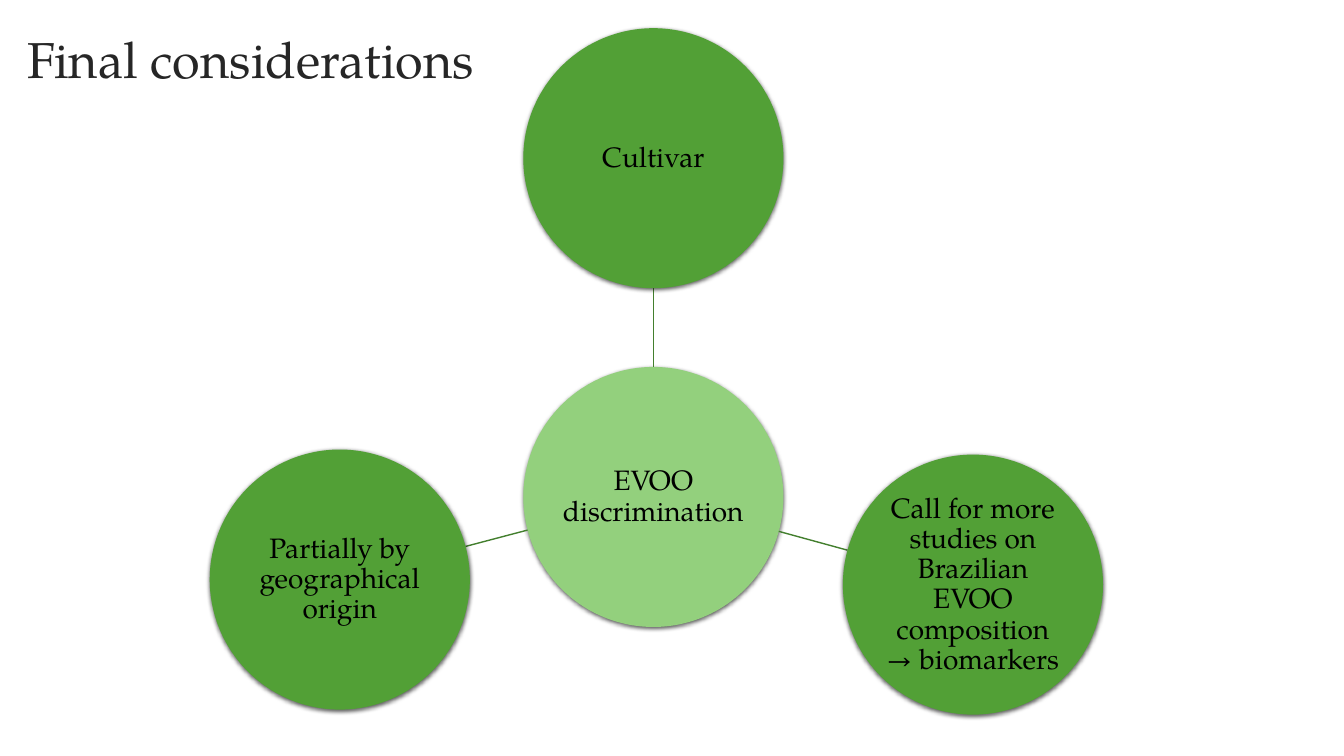
import math

import lxml.etree
import pptx
import pptx.dml.color
import pptx.enum.shapes
import pptx.enum.text
import pptx.oxml
import pptx.oxml.ns
import pptx.util

PX = 9144  # 100 px to the inch
FONT = "TeX Gyre Pagella"
RGB = pptx.dml.color.RGBColor
BLACK = RGB(0x00, 0x00, 0x00)
DARK = RGB(0x26, 0x26, 0x26)
LIGHT = RGB(0x93, 0xD0, 0x7D)
GREEN = RGB(0x52, 0xA0, 0x36)
LINE = RGB(0x43, 0x7F, 0x2E)
ALIGN = pptx.enum.text.PP_ALIGN
SHADOW = (
    f'<a:outerShdw {pptx.oxml.ns.nsdecls("a")} blurRad="38100" dist="12700" '
    'dir="5400000" algn="ctr" rotWithShape="0"><a:srgbClr val="000000">'
    '<a:alpha val="63000"/></a:srgbClr></a:outerShdw>'
)


def write(shape, text, size=20, color=BLACK, align=ALIGN.CENTER, inset=1, after=7):
    frame = shape.text_frame
    frame.word_wrap = True
    frame.auto_size = pptx.enum.text.MSO_AUTO_SIZE.NONE
    frame.vertical_anchor = pptx.enum.text.MSO_ANCHOR.MIDDLE
    frame.margin_left = frame.margin_right = inset * PX
    frame.margin_top = frame.margin_bottom = inset * PX
    para = frame.paragraphs[0]
    para.alignment = align
    para.line_spacing = 0.9
    para.space_before = pptx.util.Pt(0)
    para.space_after = pptx.util.Pt(after)
    run = para.add_run()
    run.text = text
    run.font.name = FONT
    run.font.size = pptx.util.Pt(size)
    run.font.color.rgb = color


def disc(x, y, text, fill):
    """Draw a shadowed circle centred on x, y."""
    shape = slide.shapes.add_shape(
        pptx.enum.shapes.MSO_SHAPE.OVAL,
        (x - RADIUS) * PX, (y - RADIUS) * PX, 2 * RADIUS * PX, 2 * RADIUS * PX)
    shape.fill.solid()
    shape.fill.fore_color.rgb = fill
    shape.line.fill.background()
    shape.shadow.inherit = False
    effects = shape._element.spPr.find(pptx.oxml.ns.qn("a:effectLst"))
    effects.append(pptx.oxml.parse_xml(SHADOW))
    write(shape, text)


deck = pptx.Presentation()
deck.slide_width = 1333 * PX
deck.slide_height = 750 * PX
slide = deck.slides.add_slide(deck.slide_layouts[5])

RADIUS = 129
HUB = (648, 493)
SPOKES = [
    (648, 157, "Cultivar"),
    (965, 580, "Call for more studies on Brazilian EVOO composition → biomarkers"),
    (337, 575, "Partially by geographical origin"),
]

disc(*HUB, "EVOO discrimination", LIGHT)
for x, y, text in SPOKES:
    # The link runs from rim to rim along the line between the centres.
    dx, dy = x - HUB[0], y - HUB[1]
    part = RADIUS / math.hypot(dx, dy)
    ends = (HUB[0] + dx * part, HUB[1] + dy * part, x - dx * part, y - dy * part)
    link = slide.shapes.add_connector(
        pptx.enum.shapes.MSO_CONNECTOR.STRAIGHT, *[round(end * PX) for end in ends])
    link.line.color.rgb = LINE
    link.line.width = pptx.util.Pt(1)
    lxml.etree.SubElement(link._element.spPr, pptx.oxml.ns.qn("a:effectLst"))
    disc(x, y, text, GREEN)

title = slide.shapes.title
title.left, title.top = 17 * PX, 25 * PX
title.width, title.height = 1261 * PX, 74 * PX
write(title, "Final considerations", size=36, color=DARK, align=ALIGN.LEFT,
      inset=10, after=0)

deck.save("out.pptx")
